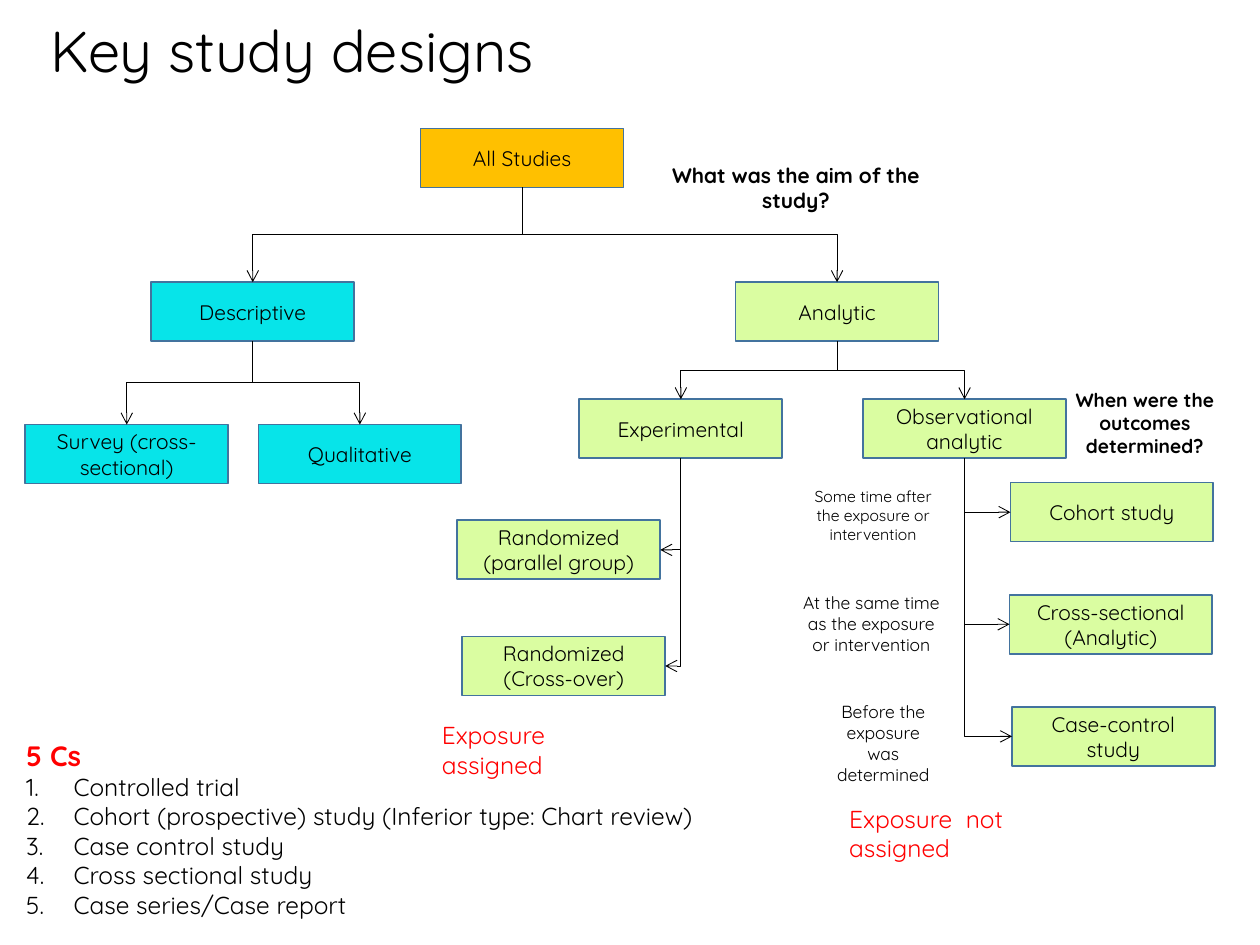
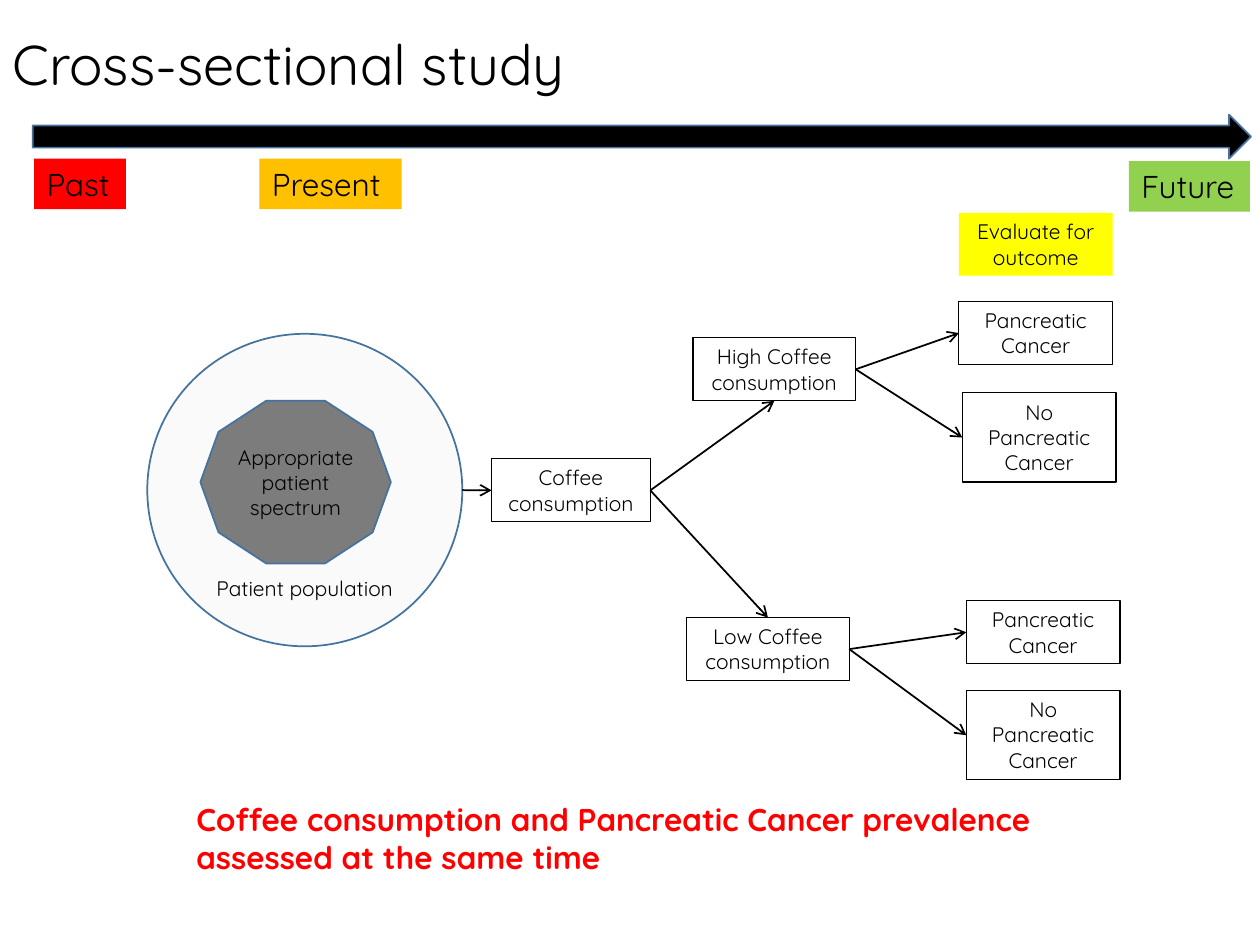
from lxml import etree
from pptx import Presentation
from pptx import util as u
from pptx.dml.color import RGBColor
from pptx.enum import shapes, text
from pptx.oxml import ns

FONT = "Quicksand"
BLACK, RED, ORANGE = "000000", "FF0000", "FFC000"
CYAN, LIME, GREEN, YELLOW = "07E4E9", "DAFDA1", "92D050", "FFFF00"
PALE, GREY, EDGE = "FAFAFA", "7C7C7C", "43739E"
NODE_W, NODE_H = 4.09, 1.19
LEFT, CENTER = text.PP_ALIGN.LEFT, text.PP_ALIGN.CENTER
TOP, MIDDLE, BOTTOM = (text.MSO_ANCHOR.TOP, text.MSO_ANCHOR.MIDDLE,
                       text.MSO_ANCHOR.BOTTOM)
SHAPE, LINE = shapes.MSO_SHAPE, shapes.MSO_CONNECTOR
ABOVE, WEST, BELOW, EAST = range(4)


def rgb(value):
    return RGBColor.from_string(value)


def add_xml(parent, tag, **attrs):
    return etree.SubElement(parent, ns.qn(tag), **attrs)


def write(p, words, size, color=BLACK, bold=False, align=LEFT):
    p.alignment = align
    r = p.add_run()
    r.text = words
    r.font.name, r.font.size, r.font.bold = FONT, u.Pt(size), bold
    r.font.color.rgb = rgb(color)


def fill_text(tf, lines, size, color=BLACK, bold=False, align=LEFT, anchor=TOP):
    """Write each line of the string as a paragraph."""
    tf.word_wrap = True
    tf.vertical_anchor = anchor
    for i, words in enumerate(lines.split("\n")):
        p = tf.add_paragraph() if i else tf.paragraphs[0]
        write(p, words, size, color, bold, align)


def title(s, words, x, y, w, h, size):
    sp = s.shapes.title
    sp.left, sp.top, sp.width, sp.height = map(u.Cm, (x, y, w, h))
    fill_text(sp.text_frame, words, size)
    sp.text_frame.paragraphs[0].line_spacing = 0.9


def label(s, x, y, w, h, words, size, **style):
    sp = s.shapes.add_textbox(*map(u.Cm, (x, y, w, h)))
    fill_text(sp.text_frame, words, size, **style)
    return sp


def shape(s, kind, x, y, w, h, fill=None, line=None, width=1):
    sp = s.shapes.add_shape(kind, *map(u.Cm, (x, y, w, h)))
    sp.shadow.inherit = False
    if fill:
        sp.fill.solid()
        sp.fill.fore_color.rgb = rgb(fill)
    else:
        sp.fill.background()
    if line:
        sp.line.color.rgb = rgb(line)
        sp.line.width = u.Pt(width)
    else:
        sp.line.fill.background()
    return sp


def node(s, x, y, words, fill):
    sp = shape(s, SHAPE.RECTANGLE, x, y, NODE_W, NODE_H, fill, EDGE)
    fill_text(sp.text_frame, words, 12, align=CENTER, anchor=MIDDLE)
    return sp


def outlined(s, x, y, w, h, words):
    sp = shape(s, SHAPE.RECTANGLE, x, y, w, h, line=BLACK, width=0.75)
    fill_text(sp.text_frame, words, 12, align=CENTER)
    return sp


def style_arrow(c, width):
    c.line.color.rgb = rgb(BLACK)
    c.line.width = u.Pt(width)
    add_xml(c.line._get_or_add_ln(), "a:tailEnd", type="arrow")
    add_xml(c._element.spPr, "a:effectLst")


def elbow(s, start, end, side=ABOVE):
    """Arrow that leaves the bottom of start downwards and enters a side of end."""
    x1, y1 = start.left + start.width // 2, start.top + start.height
    x2 = end.left + {ABOVE: end.width // 2, WEST: 0, EAST: end.width}[side]
    y2 = end.top + (0 if side == ABOVE else end.height // 2)
    c = s.shapes.add_connector(LINE.ELBOW, x1, y1, x2, y2)
    c.begin_connect(start, BELOW)
    c.end_connect(end, side)
    # The preset runs sideways first, so it is turned a quarter about its middle.
    c.width, c.height = y2 - y1, abs(x2 - x1)
    c.left, c.top = (x1 + x2 - c.width) // 2, (y1 + y2 - c.height) // 2
    rightwards = x2 > x1
    xfrm = c._element.spPr.find(ns.qn("a:xfrm"))
    xfrm.set("rot", "16200000" if rightwards else "5400000")
    xfrm.set("flipH", "1" if rightwards else "0")
    xfrm.set("flipV", "0")
    if side != ABOVE:
        c._element.spPr.find(ns.qn("a:prstGeom")).set("prst", "bentConnector2")
    style_arrow(c, 0.5)


def straight(s, start, end, side=WEST):
    c = s.shapes.add_connector(LINE.STRAIGHT, 0, 0, 0, 0)
    c.begin_connect(start, EAST)
    c.end_connect(end, side)
    style_arrow(c, 1)


def descriptive_branch(s, x, y):
    head = node(s, x + 2.54, y, "Descriptive", CYAN)
    for dx, words in ((0, "Survey (cross-sectional)"), (4.7, "Qualitative")):
        elbow(s, head, node(s, x + dx, y + 2.87, words, CYAN))
    return head


def experimental_branch(s, x, y):
    head = node(s, x + 2.46, y, "Experimental", LIME)
    for dx, dy, words in ((0, 2.44, "Randomized\n(parallel group)"),
                          (0.1, 4.78, "Randomized\n(Cross-over)")):
        elbow(s, head, node(s, x + dx, y + dy, words, LIME), EAST)
    label(s, x - 0.56, y + 6.35, 3.2, 1.5, "Exposure assigned", 14, color=RED)
    return head


def observational_branch(s, x, y):
    head = node(s, x + 1.55, y, "Observational analytic", LIME)
    label(s, x + 5.44, y - 0.35, 3.58, 1.68, "When were the outcomes determined?",
          11, bold=True, align=CENTER)
    designs = (
        (4.52, "Cohort study", 0.1, -0.05, 3.3, 9,
         "Some time after the exposure or intervention"),
        (4.5, "Cross-sectional\n(Analytic)", 0, -0.18, 3.43, 10,
         "At the same time as the exposure or intervention"),
        (4.55, "Case-control study", 0.61, -0.25, 2.69, 10,
         "Before the exposure was determined"))
    for i, (dx, name, note_x, note_dy, note_w, size, note) in enumerate(designs):
        row = y + 1.68 + i * 2.26
        elbow(s, head, node(s, x + dx, row, name, LIME), WEST)
        label(s, x + note_x, row + note_dy, note_w, 1.5, note, size, align=CENTER)
    label(s, x + 1.02, y + 8.03, 4, 1.5, "Exposure  not assigned", 14, color=RED)
    return head


def five_cs(s, x, y, w, h):
    tf = label(s, x, y, w, h, "5 Cs", 16, color=RED, bold=True).text_frame
    for words in ("Controlled trial",
                  "Cohort (prospective) study (Inferior type: Chart review)",
                  "Case control study", "Cross sectional study",
                  "Case series/Case report"):
        p = tf.add_paragraph()
        write(p, words, 14)
        indent = u.Pt(27)
        pPr = p._p.get_or_add_pPr()
        pPr.set("marL", str(indent))
        pPr.set("indent", str(-indent))
        add_xml(pPr, "a:buAutoNum", type="arabicPeriod")


def key_designs_slide(prs):
    s = prs.slides.add_slide(prs.slide_layouts[5])
    title(s, "Key study designs", 0.76, 0.33, 24.64, 1.9, 33)
    root = node(s, 8.48, 2.59, "All Studies", ORANGE)
    label(s, 13.06, 3.15, 5.97, 1.27, "What was the aim of the study?", 12,
          bold=True, align=CENTER)
    analytic = node(s, 14.83, 5.69, "Analytic", LIME)
    for head in (descriptive_branch(s, 0.51, 5.69), analytic):
        elbow(s, root, head)
    for head in (experimental_branch(s, 9.22, 8.05),
                 observational_branch(s, 15.85, 8.05)):
        elbow(s, analytic, head)
    five_cs(s, 0.28, 14.76, 14.66, 3.94)


def timeline(s, x, y, w):
    shape(s, SHAPE.RIGHT_ARROW, x, y, w, 0.89, BLACK, EDGE)
    for dx, dy, tag_w, words, fill in ((0.03, 0.89, 1.85, "Past", RED),
                                       (4.57, 0.89, 2.87, "Present", ORANGE),
                                       (w - 2.46, 0.94, 2.44, "Future", GREEN)):
        sp = shape(s, SHAPE.RECTANGLE, x + dx, y + dy, tag_w, 1.02, fill)
        fill_text(sp.text_frame, words, 18)


def population(s, x, y, w, h):
    circle = shape(s, SHAPE.OVAL, x, y, w, h, PALE, EDGE)
    circle.text_frame.margin_bottom = 0
    fill_text(circle.text_frame, "Patient population", 12, align=CENTER,
              anchor=BOTTOM)
    core = shape(s, SHAPE.DECAGON, x + 1.07, y + 1.35, 3.84, 3.28, GREY, EDGE)
    fill_text(core.text_frame, "Appropriate patient spectrum", 12, align=CENTER,
              anchor=MIDDLE)
    return circle


def exposure_group(s, x, y, words, outcomes):
    """Exposure box with its outcomes, given as (dx, dy, height, words)."""
    group = outlined(s, x, y, 3.28, 1.27, words)
    for dx, dy, h, outcome in outcomes:
        straight(s, group, outlined(s, x + dx, y + dy, 3.1, h, outcome))
    return group


def cross_sectional_slide(prs):
    s = prs.slides.add_slide(prs.slide_layouts[5])
    title(s, "Cross-sectional study", 0, 0.62, 21.59, 1.65, 32)
    timeline(s, 0.66, 2.31, 24.56)
    circle = population(s, 2.97, 6.73, 6.35, 6.3)

    coffee = outlined(s, 9.91, 9.25, 3.2, 1.27, "Coffee\nconsumption")
    c = s.shapes.add_connector(LINE.STRAIGHT, circle.left + circle.width,
                               circle.top + circle.height // 2, 0, 0)
    c.end_connect(coffee, WEST)
    style_arrow(c, 1)

    sp = shape(s, SHAPE.RECTANGLE, 19.33, 4.29, 3.1, 1.27, YELLOW)
    fill_text(sp.text_frame, "Evaluate for outcome", 12, align=CENTER)
    high = exposure_group(s, 13.97, 6.81, "High Coffee\nconsumption",
                          ((5.36, -0.73, 1.27, "Pancreatic Cancer"),
                           (5.43, 1.11, 1.8, "No Pancreatic Cancer")))
    low = exposure_group(s, 13.84, 12.45, "Low Coffee\nconsumption",
                         ((5.64, -0.34, 1.27, "Pancreatic Cancer"),
                          (5.64, 1.47, 1.8, "No Pancreatic Cancer")))
    straight(s, coffee, high, BELOW)
    straight(s, coffee, low, ABOVE)
    label(s, 3.71, 16, 17.32, 1.8, "Coffee consumption and Pancreatic Cancer "
          "prevalence assessed at the same time", 18, color=RED, bold=True)


def main():
    prs = Presentation()
    prs.slide_width, prs.slide_height = u.Cm(25.4), u.Cm(19.05)
    key_designs_slide(prs)
    cross_sectional_slide(prs)
    prs.save("out.pptx")


if __name__ == "__main__":
    main()
